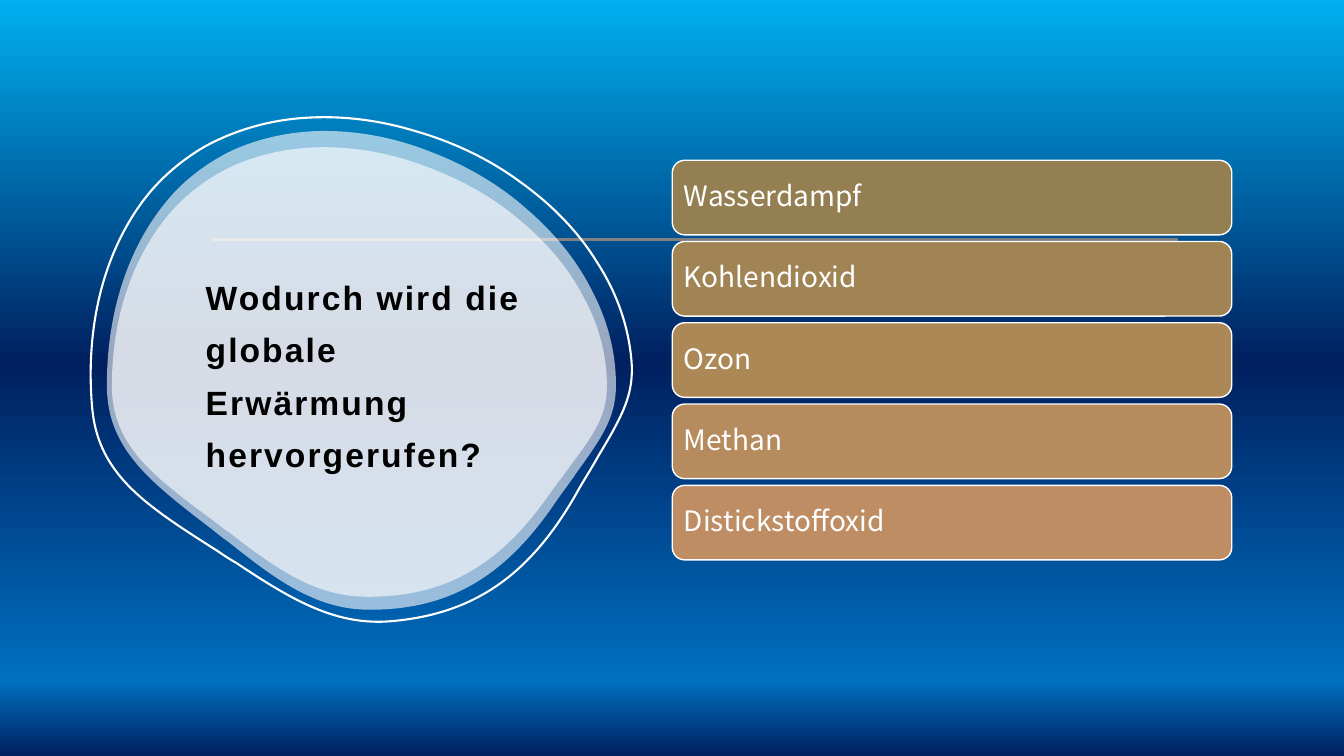
from dataclasses import dataclass
from typing import Optional

from lxml import etree
from pptx import Presentation
from pptx.dml.color import RGBColor
from pptx.enum.shapes import MSO_CONNECTOR, MSO_SHAPE
from pptx.enum.text import MSO_ANCHOR, MSO_AUTO_SIZE, PP_ALIGN
from pptx.oxml.ns import qn
from pptx.slide import Slide
from pptx.util import Inches, Pt

STRAIGHT = MSO_CONNECTOR.STRAIGHT
ROUNDED = MSO_SHAPE.ROUNDED_RECTANGLE
MIDDLE = MSO_ANCHOR.MIDDLE
LEFT = PP_ALIGN.LEFT
FIXED_SIZE = MSO_AUTO_SIZE.NONE

SLIDE_WIDTH, SLIDE_HEIGHT = Inches(13.33), Inches(7.5)
TITLE_ONLY = 5


@dataclass(frozen=True)
class Theme:
    sky: tuple = ((0, "00B0F0"), (48, "002060"), (90, "0070C0"), (100, "002060"))
    white: str = "FFFFFF"
    black: str = "000000"
    rule: str = "808080"
    title_font: str = "Arial"
    card_font: str = "Noto Sans CJK JP"
    title_size: int = 24
    card_size: int = 20
    rule_width: float = 2
    outline_width: float = 1.5
    card_border: float = 1


@dataclass(frozen=True)
class Frame:
    """Place and size in percent of the slide's width and height."""
    left: float
    top: float
    width: float
    height: float

    def lengths(self) -> tuple[int, int, int, int]:
        return (across(self.left), down(self.top),
                across(self.width), down(self.height))


@dataclass(frozen=True)
class Blob:
    frame: Frame
    opacity: Optional[int] = None  # percent; None draws only the outline
    rotation: float = 0


@dataclass(frozen=True)
class Card:
    label: str
    color: str


THEME = Theme()
TITLE = "Wodurch wird die globale Erwärmung hervorgerufen?"
TITLE_FRAME = Frame(14.4, 27.33, 27.15, 42.8)
RULE_LEFT, RULE_RIGHT, RULE_TOP = 15.75, 87.68, 31.73
FIRST_CARD = Frame(50.02, 21.2, 41.63, 9.87)
CARD_PITCH = 10.75

BLOBS = (
    Blob(Frame(7.95, 17.33, 37.88, 63.33), opacity=60),
    Blob(Frame(8.33, 19.47, 36.83, 59.47), opacity=60),
    Blob(Frame(6.68, 15.07, 40.28, 67.33), rotation=355),
)
CARDS = (
    Card("Wasserdampf", "947F53"),
    Card("Kohlendioxid", "A18454"),
    Card("Ozon", "AD8857"),
    Card("Methan", "B68B5D"),
    Card("Distickstoffoxid", "BE8D64"),
)

# Each curve: first control point, second control point, end point.
BLOB_START = (216, 0)
BLOB_CURVES = (
    ((183, 0), (152, 7), (125, 19)),
    ((100, 31), (77, 48), (59, 70)),
    ((21, 116), (0, 180), (0, 252)),
    ((0, 280), (8, 303), (26, 326)),
    ((45, 350), (74, 372), (104, 395)),
    ((109, 399), (115, 404), (121, 408)),
    ((172, 449), (210, 475), (261, 475)),
    ((339, 475), (395, 443), (446, 367)),
    ((453, 357), (460, 348), (466, 339)),
    ((492, 303), (505, 284), (505, 252)),
    ((505, 220), (497, 188), (481, 158)),
    ((466, 128), (444, 101), (416, 77)),
    ((389, 53), (356, 34), (322, 21)),
    ((287, 7), (251, 0), BLOB_START),
)


def across(percent: float) -> int:
    return round(SLIDE_WIDTH * percent / 100)


def down(percent: float) -> int:
    return round(SLIDE_HEIGHT * percent / 100)


def rgb(color: str) -> RGBColor:
    return RGBColor.from_string(color)


def paint_background(page: Slide) -> None:
    fill = page.background.fill
    fill.gradient()
    fill.gradient_angle = 270
    stops = page.element.find(".//" + qn("a:gsLst"))
    for stop in list(stops):
        stops.remove(stop)
    for position, color in THEME.sky:
        stop = etree.SubElement(stops, qn("a:gs"), pos=str(position * 1000))
        etree.SubElement(stop, qn("a:srgbClr"), val=color)


def draw_rule(page: Slide) -> None:
    height = down(RULE_TOP)
    rule = page.shapes.add_connector(
        STRAIGHT, across(RULE_LEFT), height, across(RULE_RIGHT), height)
    rule.line.color.rgb = rgb(THEME.rule)
    rule.line.width = Pt(THEME.rule_width)
    etree.SubElement(rule.element.spPr, qn("a:effectLst"))


def draw_blob(page: Slide, blob: Blob) -> None:
    """Draw the closed outline, turning its straight segments into curves."""
    builder = page.shapes.build_freeform(*BLOB_START, scale=Inches(0.01))
    builder.add_line_segments([end for _, _, end in BLOB_CURVES], close=True)
    shape = builder.convert_to_shape()
    segments = list(shape.element.iter(qn("a:lnTo")))
    for segment, curve in zip(segments, BLOB_CURVES):
        segment.tag = qn("a:cubicBezTo")
        for index, (x, y) in enumerate(curve[:2]):
            control = etree.Element(qn("a:pt"), x=str(x), y=str(y))
            segment.insert(index, control)

    shape.left, shape.top, shape.width, shape.height = blob.frame.lengths()
    shape.rotation = blob.rotation
    shape.shadow.inherit = False
    if blob.opacity is None:
        shape.fill.background()
        shape.line.color.rgb = rgb(THEME.white)
        shape.line.width = Pt(THEME.outline_width)
    else:
        shape.line.fill.background()
        shape.fill.solid()
        shape.fill.fore_color.rgb = rgb(THEME.white)
        color = shape.element.spPr.find(qn("a:solidFill") + "/" + qn("a:srgbClr"))
        etree.SubElement(color, qn("a:alpha"), val=str(blob.opacity * 1000))


def place_title(page: Slide) -> None:
    title = page.shapes.title
    page.shapes.element.append(title.element)  # in front of the blobs
    title.left, title.top, title.width, title.height = TITLE_FRAME.lengths()
    box = title.text_frame
    box.text = TITLE
    box.word_wrap = True
    box.auto_size = FIXED_SIZE
    box.vertical_anchor = MIDDLE
    box.margin_left = box.margin_right = box.margin_top = Inches(0.12)
    box.margin_bottom = Inches(0.1)
    para = box.paragraphs[0]
    para.alignment = LEFT
    para.line_spacing = 1.3
    font = para.font
    font.name, font.size, font.bold = THEME.title_font, Pt(THEME.title_size), True
    font.color.rgb = rgb(THEME.black)
    title.element.find(".//" + qn("a:defRPr")).set("spc", "150")


def draw_card(page: Slide, card: Card, frame: Frame) -> None:
    shape = page.shapes.add_shape(ROUNDED, *frame.lengths())
    shape.shadow.inherit = False
    shape.fill.solid()
    shape.fill.fore_color.rgb = rgb(card.color)
    shape.line.color.rgb = rgb(THEME.white)
    shape.line.width = Pt(THEME.card_border)
    box = shape.text_frame
    box.text = card.label
    box.word_wrap = True
    box.vertical_anchor = MIDDLE
    box.margin_left = box.margin_right = Inches(0.08)
    para = box.paragraphs[0]
    para.alignment = LEFT
    para.line_spacing = 0.9
    font = para.font
    font.name, font.size = THEME.card_font, Pt(THEME.card_size)
    font.color.rgb = rgb(THEME.white)


def main() -> None:
    deck = Presentation()
    deck.slide_width, deck.slide_height = SLIDE_WIDTH, SLIDE_HEIGHT
    page = deck.slides.add_slide(deck.slide_layouts[TITLE_ONLY])
    paint_background(page)
    draw_rule(page)
    for blob in BLOBS:
        draw_blob(page, blob)
    place_title(page)
    for row, card in enumerate(CARDS):
        top = FIRST_CARD.top + row * CARD_PITCH
        draw_card(page, card, Frame(FIRST_CARD.left, top, FIRST_CARD.width, FIRST_CARD.height))
    deck.save("out.pptx")


if __name__ == "__main__":
    main()
